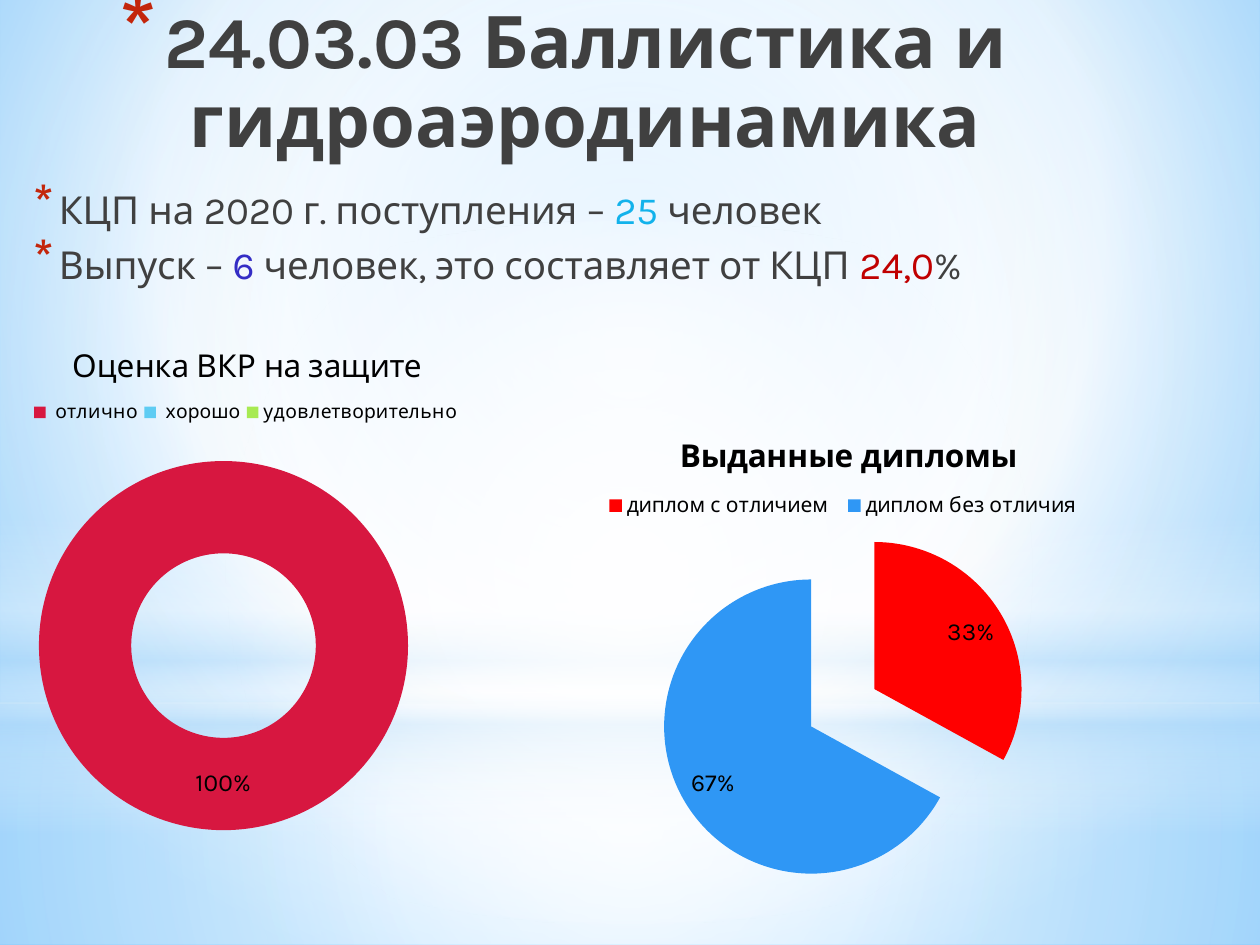
from dataclasses import dataclass

import lxml.etree
import pptx
import pptx.chart.data
import pptx.dml.color
import pptx.enum.chart
import pptx.enum.shapes
import pptx.enum.text
import pptx.oxml
import pptx.oxml.ns
import pptx.util

Inches, Pt = pptx.util.Inches, pptx.util.Pt
RGBColor = pptx.dml.color.RGBColor
ChartType = pptx.enum.chart.XL_CHART_TYPE
ShapeType = pptx.enum.shapes.MSO_SHAPE
qn = pptx.oxml.ns.qn

FONT = "Karla"
BLACK = RGBColor(0x00, 0x00, 0x00)
GREY = RGBColor(0x40, 0x40, 0x40)
BULLET = RGBColor(0xC3, 0x26, 0x0C)
CYAN = RGBColor(0x12, 0xB2, 0xEB)
VIOLET = RGBColor(0x34, 0x2D, 0xC5)
DARK_RED = RGBColor(0xC0, 0x00, 0x00)
CRIMSON = RGBColor(0xD7, 0x17, 0x40)
SKY = RGBColor(0x5E, 0xCC, 0xF3)
LIME = RGBColor(0xA7, 0xEA, 0x52)
RED = RGBColor(0xFF, 0x00, 0x00)
BLUE = RGBColor(0x2F, 0x97, 0xF5)
WHITE = RGBColor(0xFF, 0xFF, 0xFF)
PALE_BLUE = RGBColor(0xB4, 0xDC, 0xFA)
BACK_CENTRE = RGBColor(0x9E, 0xD5, 0xFF)
BACK_EDGE = RGBColor(0x5B, 0xB9, 0xFF)
CENTRE = (50, 50, 50, 50)


@dataclass
class Glow:
    """A soft backdrop shape; stops are (position, colour, opacity), focus None means vertical."""
    kind: int
    box: tuple
    stops: list
    focus: tuple | None = CENTRE


@dataclass
class TextBlock:
    box: tuple
    paragraphs: list
    size: float
    bold: bool
    margin: float
    hanging: float
    bullet_percent: int
    paragraph_format: dict


@dataclass
class RoundChart:
    kind: int
    box: tuple
    title: str
    title_bold: bool
    categories: list
    values: list
    colors: list
    legend_size: int
    title_at: tuple
    legend_at: tuple
    plot_at: tuple
    label_position: int | None = None


GLOWS = [
    Glow(ShapeType.RECTANGLE, (0, 5.58, 10, 1.92),
         [(0, WHITE, 91), (37, WHITE, 76), (100, PALE_BLUE, 79)]),
    Glow(ShapeType.RECTANGLE, (0, 0, 10, 5.58),
         [(0, WHITE, 89), (48, WHITE, 62), (100, PALE_BLUE, 79)]),
    Glow(ShapeType.RECTANGLE, (0, 4.12, 10, 2.5),
         [(0, WHITE, 0), (29, WHITE, 30), (45, PALE_BLUE, 40),
          (55, WHITE, 26), (65, PALE_BLUE, 60), (100, WHITE, 0)], None),
    Glow(ShapeType.OVAL, (0, 1.75, 10, 5.58), [(0, WHITE, 100), (56, WHITE, 0)]),
]

TEXTS = [
    TextBlock((0.51, 0, 7.92, 1.25), [[("24.03.03 Баллистика и гидроаэродинамика", GREY)]],
              41.4, True, 0.35, -0.35, 128,
              {"alignment": pptx.enum.text.PP_ALIGN.CENTER, "line_spacing": 0.9}),
    TextBlock((0.12, 1.47, 8.94, 1.1),
              [[("КЦП на 2020 г. поступления – ", GREY), ("25 ", CYAN), ("человек", GREY)],
               [("Выпуск – ", GREY), ("6 ", VIOLET), ("человек, это составляет от КЦП ", GREY),
                ("24,0", DARK_RED), ("%", GREY)]],
              22, False, 0.25, -0.2, 130,
              {"line_spacing": 0.9, "space_before": Pt(4.4), "space_after": Pt(3)}),
]

CHARTS = [
    RoundChart(ChartType.DOUGHNUT, (0.12, 2.65, 5.09, 4.02), "Оценка ВКР на защите", False,
               [" отлично", " хорошо", "удовлетворительно"], [100, 0, 0],
               [CRIMSON, SKY, LIME], 11,
               (0.08, 0.01), (0.02, 0.12, 0.68, 0.07), (0, 0.16, 0.65, 0.82)),
    RoundChart(ChartType.PIE, (3.5, 3.2, 6.38, 4.17), "Выданные дипломы", True,
               ["диплом с отличием ", "диплом без отличия"], [33, 67], [RED, BLUE], 12,
               (0.29, 0.05), (0.2, 0.16, 0.6, 0.07), (0, 0.23, 1, 0.7),
               pptx.enum.chart.XL_LABEL_POSITION.INSIDE_END),
]


def apply(target, values: dict) -> None:
    for name, value in values.items():
        setattr(target, name, value)


def inches(box: tuple) -> list:
    return [Inches(value) for value in box]


def gradient(stops: list, focus: tuple | None):
    stop_xml = "".join(
        f'<a:gs pos="{position * 1000}"><a:srgbClr val="{color}">'
        f'<a:alpha val="{opacity * 1000}"/></a:srgbClr></a:gs>'
        for position, color, opacity in stops)
    if focus is None:
        direction = '<a:lin ang="5400000" scaled="0"/>'
    else:
        sides = " ".join(f'{side}="{value * 1000}"' for side, value in zip("ltrb", focus))
        direction = f'<a:path path="circle"><a:fillToRect {sides}/></a:path>'
    return pptx.oxml.parse_xml(
        f'<a:gradFill {pptx.oxml.ns.nsdecls("a")} rotWithShape="1">'
        f'<a:gsLst>{stop_xml}</a:gsLst>{direction}</a:gradFill>')


def draw_background(slide) -> None:
    slide.background.fill.solid()
    properties = slide.element.find(".//" + qn("p:bgPr"))
    properties.replace(properties[0], gradient(
        [(0, BACK_CENTRE, 100), (60, WHITE, 100), (100, BACK_EDGE, 100)], (20, 10, 20, 60)))


def draw_glow(slide, glow: Glow) -> None:
    shape = slide.shapes.add_shape(glow.kind, *inches(glow.box))
    shape.shadow.inherit = False
    shape.line.fill.background()
    geometry = shape.element.spPr.find(qn("a:prstGeom"))
    geometry.addnext(gradient(glow.stops, glow.focus))


def draw_text(slide, block: TextBlock) -> None:
    frame = slide.shapes.add_textbox(*inches(block.box)).text_frame
    frame.word_wrap = True
    for index, runs in enumerate(block.paragraphs):
        paragraph = frame.add_paragraph() if index else frame.paragraphs[0]
        apply(paragraph, block.paragraph_format)
        for text, color in runs:
            run = paragraph.add_run()
            run.text = text
            apply(run.font, {"name": FONT, "size": Pt(block.size), "bold": block.bold})
            run.font.color.rgb = color
        # Hanging red asterisk
        properties = paragraph._p.get_or_add_pPr()
        properties.set("marL", str(Inches(block.margin)))
        properties.set("indent", str(Inches(block.hanging)))
        bullet_color = lxml.etree.SubElement(properties, qn("a:buClr"))
        lxml.etree.SubElement(bullet_color, qn("a:srgbClr"), val=str(BULLET))
        lxml.etree.SubElement(properties, qn("a:buSzPct"), val=str(block.bullet_percent * 1000))
        lxml.etree.SubElement(properties, qn("a:buChar"), char="*")


def place(element, index: int, position: tuple, inner: bool = False) -> None:
    """Give a chart part a manual layout in fractions of the chart."""
    for old in element.findall(qn("c:layout")):
        element.remove(old)
    layout = lxml.etree.Element(qn("c:layout"))
    manual = lxml.etree.SubElement(layout, qn("c:manualLayout"))
    settings = [("layoutTarget", "inner")] if inner else []
    settings += [("xMode", "edge"), ("yMode", "edge")]
    settings += zip("xywh", map(str, position))
    for tag, value in settings:
        lxml.etree.SubElement(manual, qn("c:" + tag), val=value)
    element.insert(index, layout)


def draw_chart(slide, item: RoundChart) -> None:
    data = pptx.chart.data.CategoryChartData()
    data.categories = item.categories
    data.add_series("Series 1", item.values)
    chart = slide.shapes.add_chart(item.kind, *inches(item.box), data).chart
    apply(chart.font, {"name": FONT, "size": Pt(10)})
    chart.font.color.rgb = BLACK

    # Title and legend
    chart.has_title = chart.has_legend = True
    frame = chart.chart_title.text_frame
    frame.text = item.title
    title_font = frame.paragraphs[0].runs[0].font
    apply(title_font, {"name": FONT, "size": Pt(18), "bold": item.title_bold})
    title_font.color.rgb = BLACK
    apply(chart.legend, {"position": pptx.enum.chart.XL_LEGEND_POSITION.TOP,
                         "include_in_layout": False})
    apply(chart.legend.font, {"name": FONT, "size": Pt(item.legend_size)})
    chart_space = chart.element
    place(chart_space.find(".//" + qn("c:title")), 1, item.title_at)
    place(chart_space.find(".//" + qn("c:legend")), 1, item.legend_at)
    place(chart_space.find(".//" + qn("c:plotArea")), 0, item.plot_at, inner=True)

    # Exploded slices
    plot = chart.plots[0]
    plot.vary_by_categories = True
    series = plot.series[0]
    explosion = lxml.etree.Element(qn("c:explosion"), val="25")
    series._element.find(qn("c:tx")).addnext(explosion)
    for index, color in enumerate(item.colors):
        fill = series.points[index].format.fill
        fill.solid()
        fill.fore_color.rgb = color

    # Percent labels, empty for zero
    plot.has_data_labels = True
    labels = plot.data_labels
    apply(labels, {"show_percentage": True, "show_value": False,
                   "number_format": "0%;;", "number_format_is_linked": False})
    apply(labels.font, {"name": FONT, "size": Pt(14)})
    if item.label_position is not None:
        labels.position = item.label_position


def main() -> None:
    presentation = pptx.Presentation()
    apply(presentation, {"slide_width": Inches(10), "slide_height": Inches(7.5)})
    slide = presentation.slides.add_slide(presentation.slide_layouts[6])
    draw_background(slide)
    for draw, items in ((draw_glow, GLOWS), (draw_text, TEXTS), (draw_chart, CHARTS)):
        for item in items:
            draw(slide, item)
    presentation.save("out.pptx")


if __name__ == "__main__":
    main()
